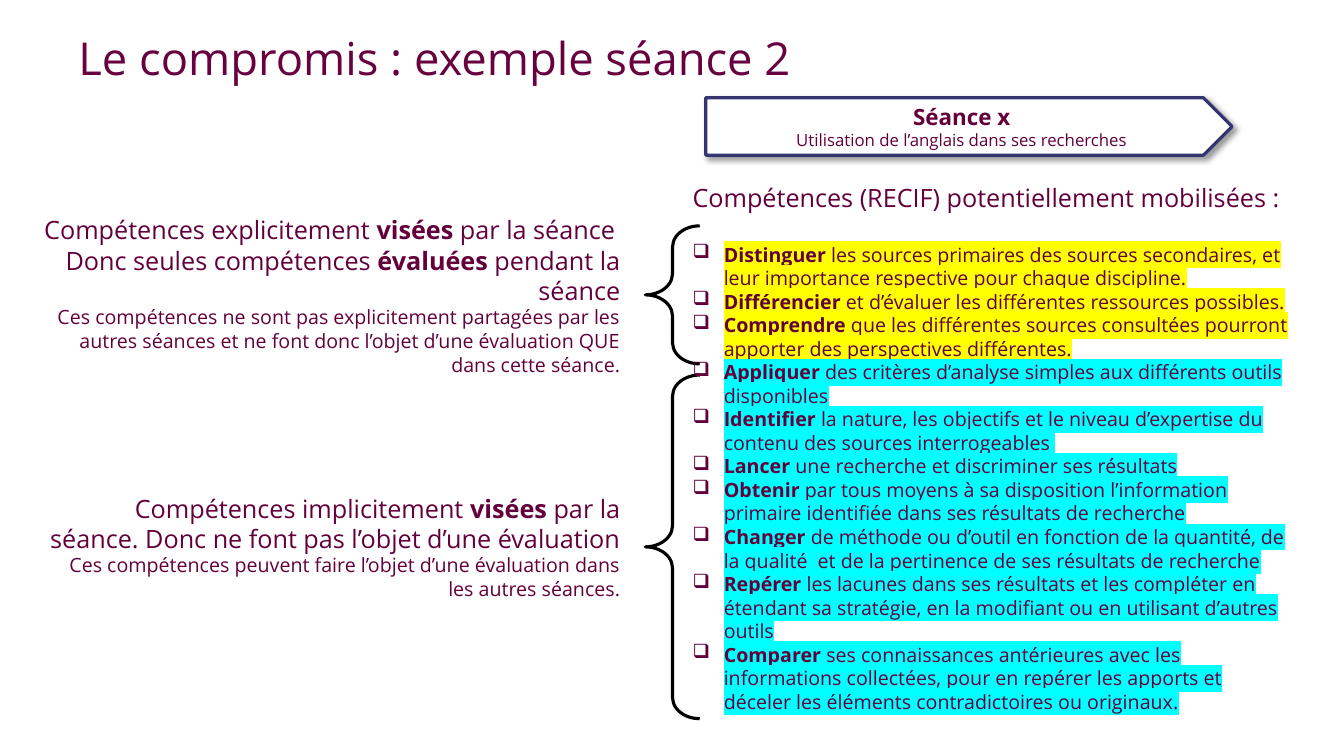
from dataclasses import dataclass

from lxml import etree
from pptx import Presentation
from pptx.dml.color import RGBColor
from pptx.enum.shapes import MSO_SHAPE
from pptx.enum.text import MSO_ANCHOR, PP_ALIGN
from pptx.oxml.ns import qn
from pptx.util import Inches, Pt

PENTAGON, BRACE = MSO_SHAPE.PENTAGON, MSO_SHAPE.RIGHT_BRACE
LEFT, CENTER, RIGHT = PP_ALIGN.LEFT, PP_ALIGN.CENTER, PP_ALIGN.RIGHT
TOP, MIDDLE = MSO_ANCHOR.TOP, MSO_ANCHOR.MIDDLE


@dataclass(frozen=True)
class Theme:
    font: str = "Open Sans"
    title_color: str = "68013F"
    text_color: str = "63003C"
    banner_line: str = "353470"
    white: str = "FFFFFF"
    black: str = "000000"
    explicit: str = "FFFF00"
    implicit: str = "00FFFF"
    title: float = 32.4
    lead: float = 18
    banner: float = 16
    body: float = 14
    small: float = 12
    line: float = 2.25


THEME = Theme()

EXPLICIT_NOTE = [
    ("Compétences explicitement **visées** par la séance", THEME.lead, LEFT),
    ("Donc seules compétences **évaluées** pendant la séance", THEME.lead, RIGHT),
    ("Ces compétences ne sont pas explicitement partagées par les autres séances "
     "et ne font donc l’objet d’une évaluation QUE dans cette séance.", THEME.body, RIGHT),
]
IMPLICIT_NOTE = [
    ("Compétences implicitement **visées** par la séance. "
     "Donc ne font pas l’objet d’une évaluation", THEME.lead, RIGHT),
    ("Ces compétences peuvent faire l’objet d’une évaluation dans les autres séances.",
     THEME.body, RIGHT),
]
SKILLS = {
    THEME.explicit: [
        "**Distinguer **les sources primaires des sources secondaires, et leur importance "
        "respective pour chaque discipline.",
        "**Différencier **et d’évaluer les différentes ressources possibles. ",
        "**Comprendre** que les différentes sources consultées pourront apporter des "
        "perspectives différentes.",
    ],
    THEME.implicit: [
        "**Appliquer **des critères d’analyse simples aux différents outils disponibles",
        "**Identifier **la nature, les objectifs et le niveau d’expertise du contenu des "
        "sources interrogeables ",
        "**Lancer **une recherche et discriminer ses résultats",
        "**Obtenir **par tous moyens à sa disposition l’information primaire identifiée "
        "dans ses résultats de recherche",
        "**Changer **de méthode ou d’outil en fonction de la quantité, de la qualité  et "
        "de la pertinence de ses résultats de recherche",
        "**Repérer **les lacunes dans ses résultats et les compléter en étendant sa "
        "stratégie, en la modifiant ou en utilisant d’autres outils",
        "**Comparer **ses connaissances antérieures avec les informations collectées, pour "
        "en repérer les apports et déceler les éléments contradictoires ou originaux.",
    ],
}


def add_para(frame, text, size, color=THEME.text_color, align=LEFT, bold=False,
             highlight=None, bullet=None, spacing=None, after=0):
    """Add a paragraph; words between ** marks are bold."""
    first = frame.paragraphs[0]
    para = frame.add_paragraph() if first.runs else first
    para.alignment = align
    para.space_after = Pt(after)
    if spacing:
        para.line_spacing = spacing
    if bullet:
        properties = para._p.get_or_add_pPr()
        properties.set("marL", str(Inches(0.31)))
        properties.set("indent", str(-Inches(0.31)))
        etree.SubElement(properties, qn("a:buChar"), char=bullet)
    for index, piece in enumerate(text.split("**")):
        if not piece:
            continue
        span = para.add_run()
        span.text = piece
        font = span.font
        font.name, font.size = THEME.font, Pt(size)
        font.bold = bold or index % 2 == 1
        font.color.rgb = RGBColor.from_string(color)
        if highlight:
            mark = etree.Element(qn("a:highlight"))
            etree.SubElement(mark, qn("a:srgbClr"), val=highlight)
            font._element.find(qn("a:solidFill")).addnext(mark)


def place(box):
    return [Inches(length) for length in box]


def add_text_box(page, box, anchor=TOP):
    frame = page.shapes.add_textbox(*place(box)).text_frame
    frame.word_wrap = True
    frame.vertical_anchor = anchor
    return frame


def add_outline(page, kind, box, color):
    shape = page.shapes.add_shape(kind, *place(box))
    shape.shadow.inherit = False
    shape.line.color.rgb = RGBColor.from_string(color)
    shape.line.width = Pt(THEME.line)
    return shape


def add_title(page, box):
    frame = add_text_box(page, box, MIDDLE)
    add_para(frame, "Le compromis : exemple séance 2", THEME.title,
             color=THEME.title_color, spacing=0.9)


def add_banner(page, box):
    banner = add_outline(page, PENTAGON, box, THEME.banner_line)
    banner.fill.solid()
    banner.fill.fore_color.rgb = RGBColor.from_string(THEME.white)
    # Soft shadow to the lower right
    effects = banner._element.spPr.find(qn("a:effectLst"))
    shadow = etree.SubElement(effects, qn("a:outerShdw"), blurRad=str(Pt(4)),
                              dist=str(Pt(3)), dir="2700000", algn="tl", rotWithShape="0")
    tint = etree.SubElement(shadow, qn("a:srgbClr"), val=THEME.black)
    etree.SubElement(tint, qn("a:alpha"), val="40000")
    frame = banner.text_frame
    frame.word_wrap = True
    frame.vertical_anchor = MIDDLE
    add_para(frame, "Séance x", THEME.banner, align=CENTER, bold=True)
    add_para(frame, "Utilisation de l’anglais dans ses recherches", THEME.small, align=CENTER)


def add_brace(page, box):
    brace = add_outline(page, BRACE, box, THEME.black)
    brace.fill.background()
    brace.rotation = 180
    brace.adjustments[0] = 0.388
    brace.adjustments[1] = 0.5


def add_note(page, box, lines):
    frame = add_text_box(page, box)
    for text, size, align in lines:
        add_para(frame, text, size, align=align)


def add_skills(page, box):
    frame = add_text_box(page, box)
    add_para(frame, "Compétences (RECIF) potentiellement mobilisées :", THEME.lead, after=21.4)
    for highlight, skills in SKILLS.items():
        for skill in skills:
            add_para(frame, skill, THEME.body, highlight=highlight, bullet="❑")


def main():
    deck = Presentation()
    deck.slide_width, deck.slide_height = Inches(13.33), Inches(7.5)
    page = deck.slides.add_slide(deck.slide_layouts[6])

    # Heading and session banner
    add_title(page, (0.68, 0.3, 11.13, 0.61))
    add_banner(page, (7, 0.97, 5.22, 0.57))

    # Braces linking the notes to the skills
    for top, height in ((2.24, 1.37), (3.72, 3.41)):
        add_brace(page, (6.4, top, 0.54, height))

    # Notes on the left, skills on the right
    add_note(page, (0.34, 2.08, 5.91, 1.72), EXPLICIT_NOTE)
    add_note(page, (0.34, 4.84, 5.91, 1.18), IMPLICIT_NOTE)
    add_skills(page, (6.77, 1.76, 6.11, 5.74))

    deck.save("out.pptx")


if __name__ == "__main__":
    main()
